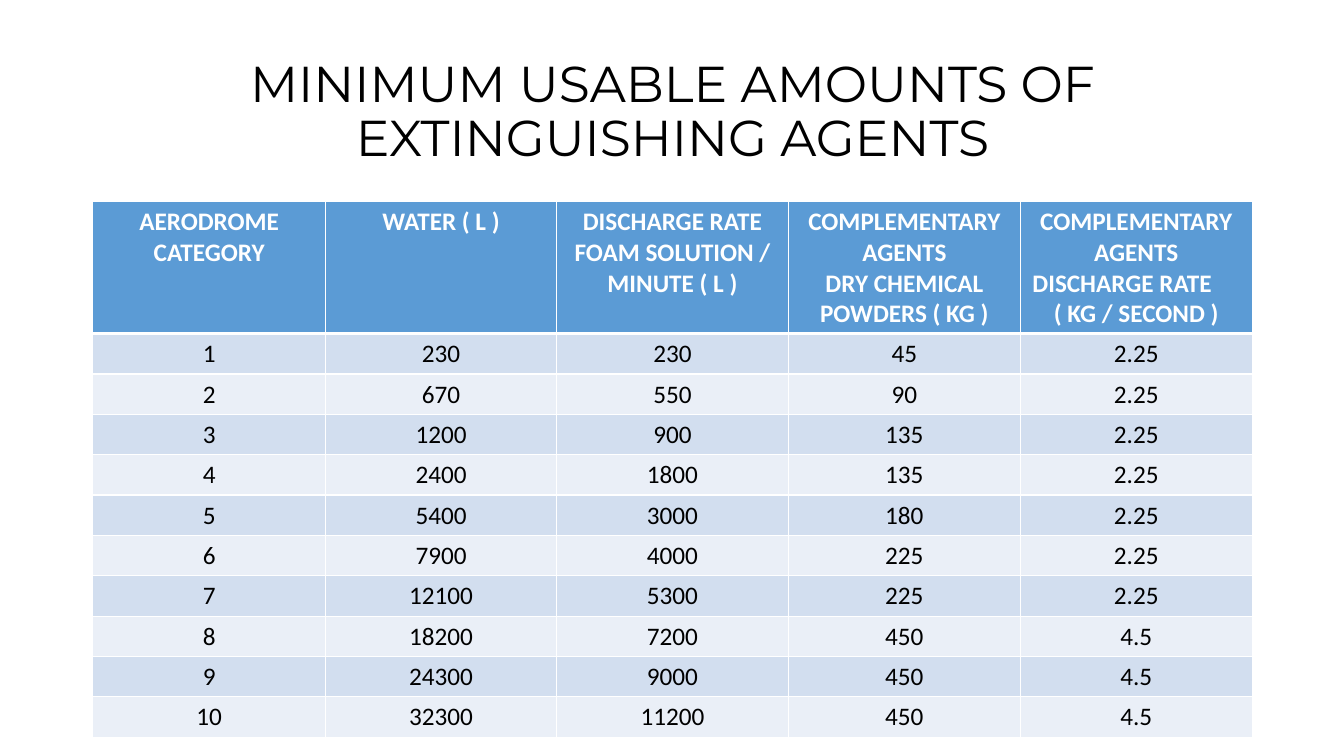
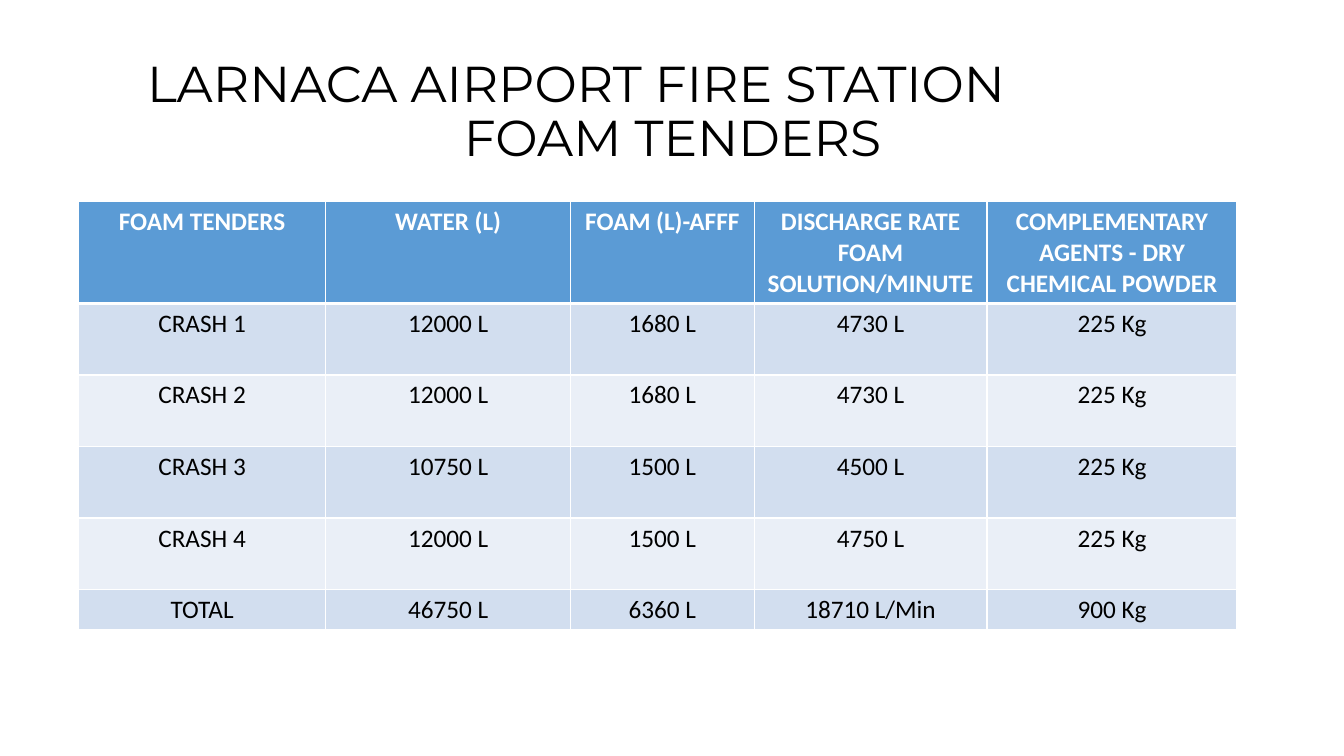
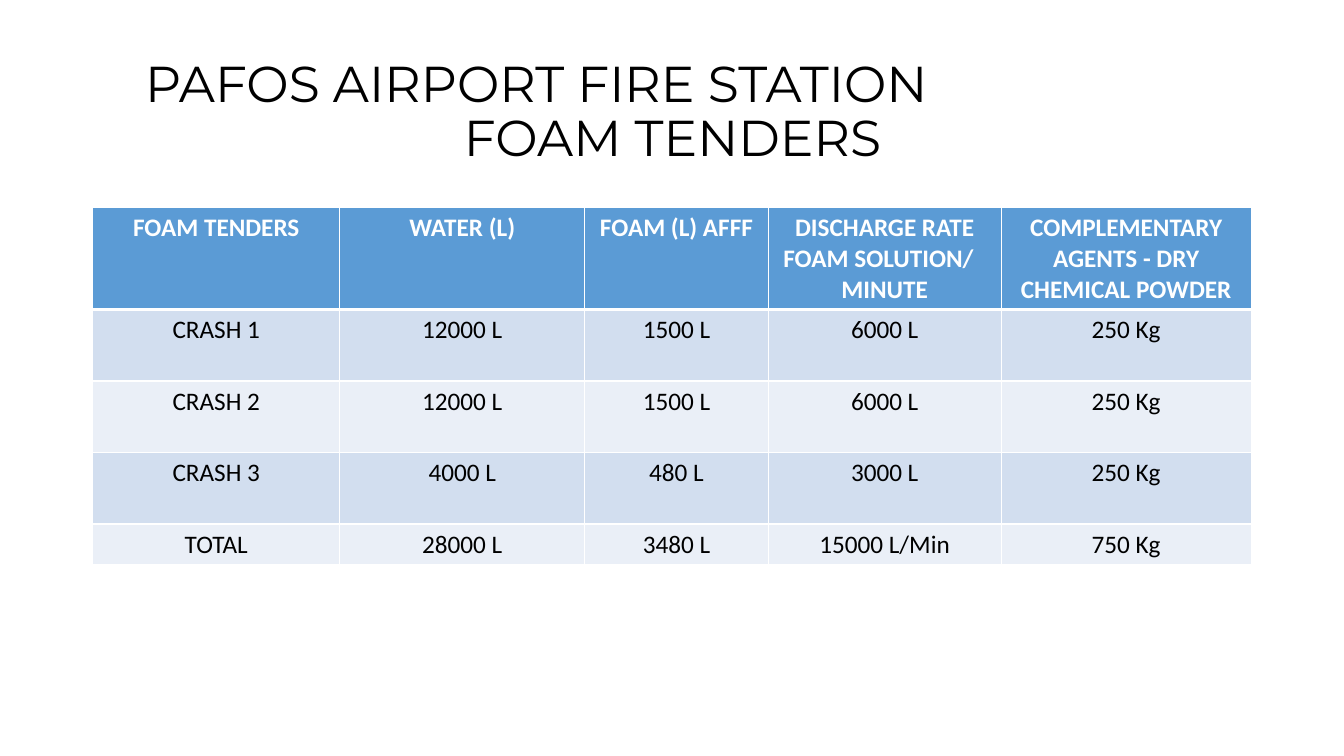
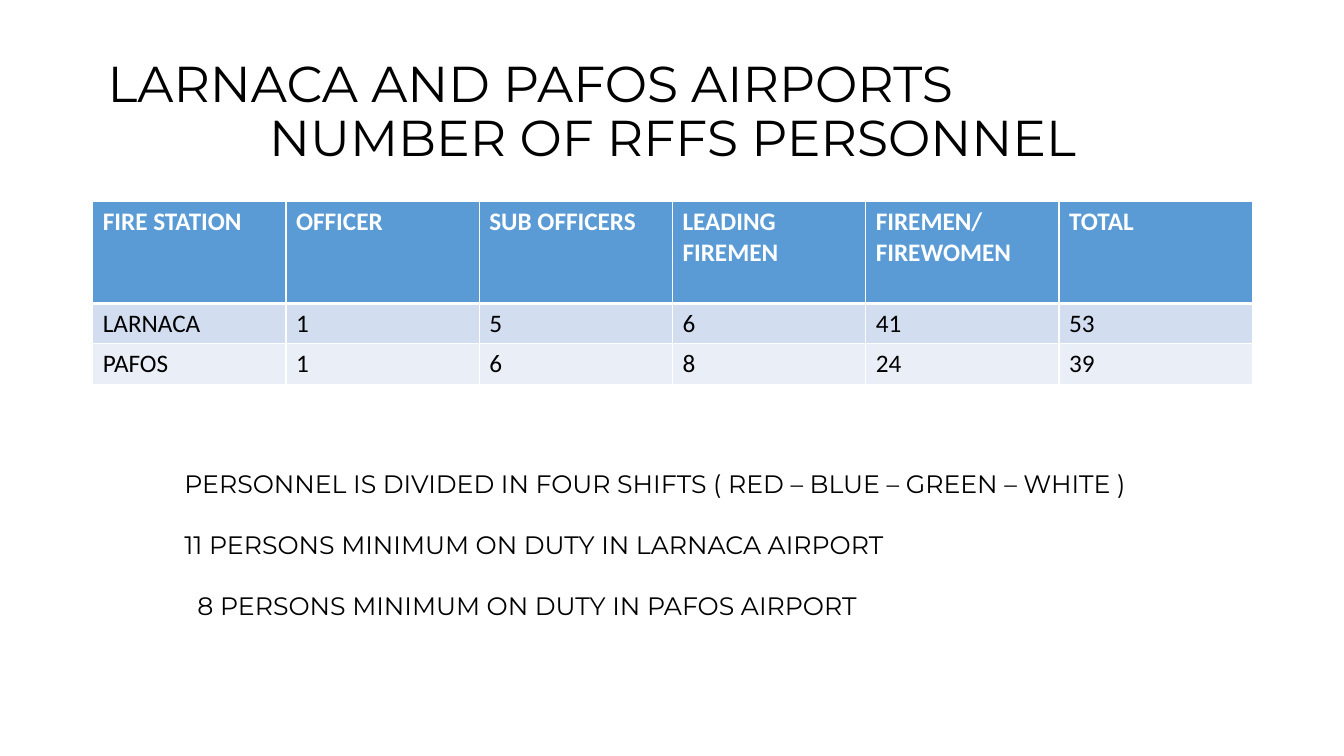
from collections import namedtuple

from lxml.etree import SubElement as Sub
from pptx import Presentation
from pptx.dml.color import RGBColor as Rgb
from pptx.enum.text import MSO_ANCHOR as Anchor, PP_ALIGN as Align
from pptx.oxml.ns import qn
from pptx.util import Inches, Pt

BLACK, WHITE = "000000", "FFFFFF"
BLUE, BANDS = "5B9BD5", ("D2DEEF", "EAEFF7")
LEFT, WIDE = 0.92, 11.5
ROW, TALL = 0.4, 0.71
TENDER = (2.45, 2.43, 1.82, 2.31, 2.48)

Line = namedtuple("Line", "text indent")
Style = namedtuple("Style", "size font color bold align space after",
                   defaults=(False, Align.CENTER, 1, 0))

TITLE = Style(36, "Montserrat", BLACK, space=0.9)
HEAD = Style(18, "Calibri", WHITE, bold=True)
BODY = HEAD._replace(color=BLACK, bold=False)
NOTE = Style(18, "Montserrat", BLACK, align=Align.LEFT, after=22)


def paint(fill, code):
    fill.solid()
    fill.fore_color.rgb = Rgb.from_string(code)


def write(frame, lines, style):
    for i, line in enumerate(lines):
        para = frame.add_paragraph() if i else frame.paragraphs[0]
        para.alignment = style.align
        para.line_spacing = style.space
        para.space_after = Pt(style.after)
        if isinstance(line, Line):
            para.text = line.text
            para.alignment = Align.LEFT
            props = para._p.get_or_add_pPr()
            props.set("marL", str(Inches(line.indent)))
            props.set("indent", "0")
        else:
            para.text = line
        font = para.runs[0].font
        font.name = style.font
        font.size = Pt(style.size)
        font.bold = style.bold
        font.color.rgb = Rgb.from_string(style.color)


def add_text(slide, box, lines, style, anchor=Anchor.TOP):
    frame = slide.shapes.add_textbox(*map(Inches, box)).text_frame
    frame.word_wrap = True
    frame.vertical_anchor = anchor
    write(frame, lines, style)


def add_slide(deck, *title):
    slide = deck.slides.add_slide(deck.slide_layouts[6])
    add_text(slide, (LEFT, 0.4, WIDE, 1.45), title, TITLE, Anchor.MIDDLE)
    return slide


def edge(cell, row):
    props = cell._tc.get_or_add_tcPr()
    thick = {"T": row == 1, "B": row == 0}
    for side in "LRTB":
        line = Sub(props, qn(f"a:ln{side}"))
        line.set("w", str(Pt(3 if thick.get(side) else 1)))
        Sub(Sub(line, qn("a:solidFill")), qn("a:srgbClr")).set("val", WHITE)


def add_grid(slide, cols, highs, rows, left=LEFT, top=2, align=Align.CENTER):
    shape = slide.shapes.add_table(
        len(rows), len(cols), Inches(left), Inches(top),
        Inches(sum(cols)), Inches(sum(highs)))
    grid = shape.table
    for col, wide in zip(grid.columns, cols):
        col.width = Inches(wide)
    for r, (high, row) in enumerate(zip(highs, rows)):
        grid.rows[r].height = Inches(high)
        style = (BODY if r else HEAD)._replace(align=align)
        for c, value in enumerate(row):
            cell = grid.cell(r, c)
            edge(cell, r)
            paint(cell.fill, BANDS[(r - 1) % 2] if r else BLUE)
            lines = value if isinstance(value, list) else [value]
            write(cell.text_frame, lines, style)


def agents(deck):
    slide = add_slide(deck, "MINIMUM USABLE AMOUNTS OF EXTINGUISHING AGENTS")
    water = (230, 670, 1200, 2400, 5400, 7900, 12100, 18200, 24300, 32300)
    foam = (230, 550, 900, 1800, 3000, 4000, 5300, 7200, 9000, 11200)
    powder = (45, 90, 135, 135, 180, 225, 225, 450, 450, 450)
    rates = (2.25,) * 7 + (4.5,) * 3
    head = ("AERODROME CATEGORY", "WATER ( L )",
            "DISCHARGE RATE FOAM SOLUTION / MINUTE ( L )",
            ["COMPLEMENTARY AGENTS", "DRY CHEMICAL POWDERS ( KG )"],
            ["COMPLEMENTARY AGENTS", Line("DISCHARGE RATE", 0.02),
             "( KG / SECOND )"])
    body = [tuple(map(str, row))
            for row in zip(range(1, 11), water, foam, powder, rates)]
    add_grid(slide, (2.31, 2.29, 2.3, 2.3, 2.3), [1.31] + [ROW] * 10,
             [head] + body)


def tenders(deck, title, foam, rate, body, left, top):
    slide = add_slide(deck, title, "FOAM TENDERS")
    head = ("FOAM TENDERS", "WATER (L)", foam, rate,
            "COMPLEMENTARY AGENTS - DRY CHEMICAL POWDER")
    highs = [1.01] + [TALL] * (len(body) - 1) + [ROW]
    add_grid(slide, TENDER, highs, [head] + body, left, top)


def staff(deck):
    slide = add_slide(deck, Line("LARNACA AND PAFOS AIRPORTS", 0.05),
                      "NUMBER OF RFFS PERSONNEL")
    rows = [("FIRE STATION", "OFFICER", "SUB OFFICERS", "LEADING FIREMEN",
             "FIREMEN/FIREWOMEN", "TOTAL"),
            ("LARNACA", "1", "5", "6", "41", "53"),
            ("PAFOS", "1", "6", "8", "24", "39")]
    add_grid(slide, [WIDE / 6] * 6, [1.01, ROW, ROW], rows, align=Align.LEFT)
    add_text(slide, (1.73, 4.6, 10.45, 1.62), [
        "PERSONNEL IS DIVIDED IN FOUR SHIFTS ( RED – BLUE – GREEN – WHITE )",
        "11 PERSONS MINIMUM ON DUTY IN LARNACA AIRPORT",
        Line("8 PERSONS MINIMUM ON DUTY IN PAFOS AIRPORT", 0.13)], NOTE)


def main():
    deck = Presentation()
    deck.slide_width, deck.slide_height = Inches(13.33), Inches(7.5)
    agents(deck)
    tenders(deck, Line("LARNACA AIRPORT FIRE STATION", 0.44),
            "FOAM (L)-AFFF", "DISCHARGE RATE FOAM SOLUTION/MINUTE", [
                ("CRASH 1", "12000 L", "1680 L", "4730 L", "225 Kg"),
                ("CRASH 2", "12000 L", "1680 L", "4730 L", "225 Kg"),
                ("CRASH 3", "10750 L", "1500 L", "4500 L", "225 Kg"),
                ("CRASH 4", "12000 L", "1500 L", "4750 L", "225 Kg"),
                ("TOTAL", "46750 L", "6360 L", "18710 L/Min", "900 Kg")],
            0.78, 2)
    tenders(deck, Line("PAFOS AIRPORT FIRE STATION", 0.42),
            "FOAM (L) AFFF",
            ["DISCHARGE RATE", Line("FOAM SOLUTION/", 0.05), "MINUTE"], [
                ("CRASH 1", "12000 L", "1500 L", "6000 L", "250 Kg"),
                ("CRASH 2", "12000 L", "1500 L", "6000 L", "250 Kg"),
                ("CRASH 3", "4000 L", "480 L", "3000 L", "250 Kg"),
                ("TOTAL", "28000 L", "3480 L", "15000 L/Min", "750 Kg")],
            LEFT, 2.06)
    staff(deck)
    deck.save("out.pptx")


if __name__ == "__main__":
    main()
